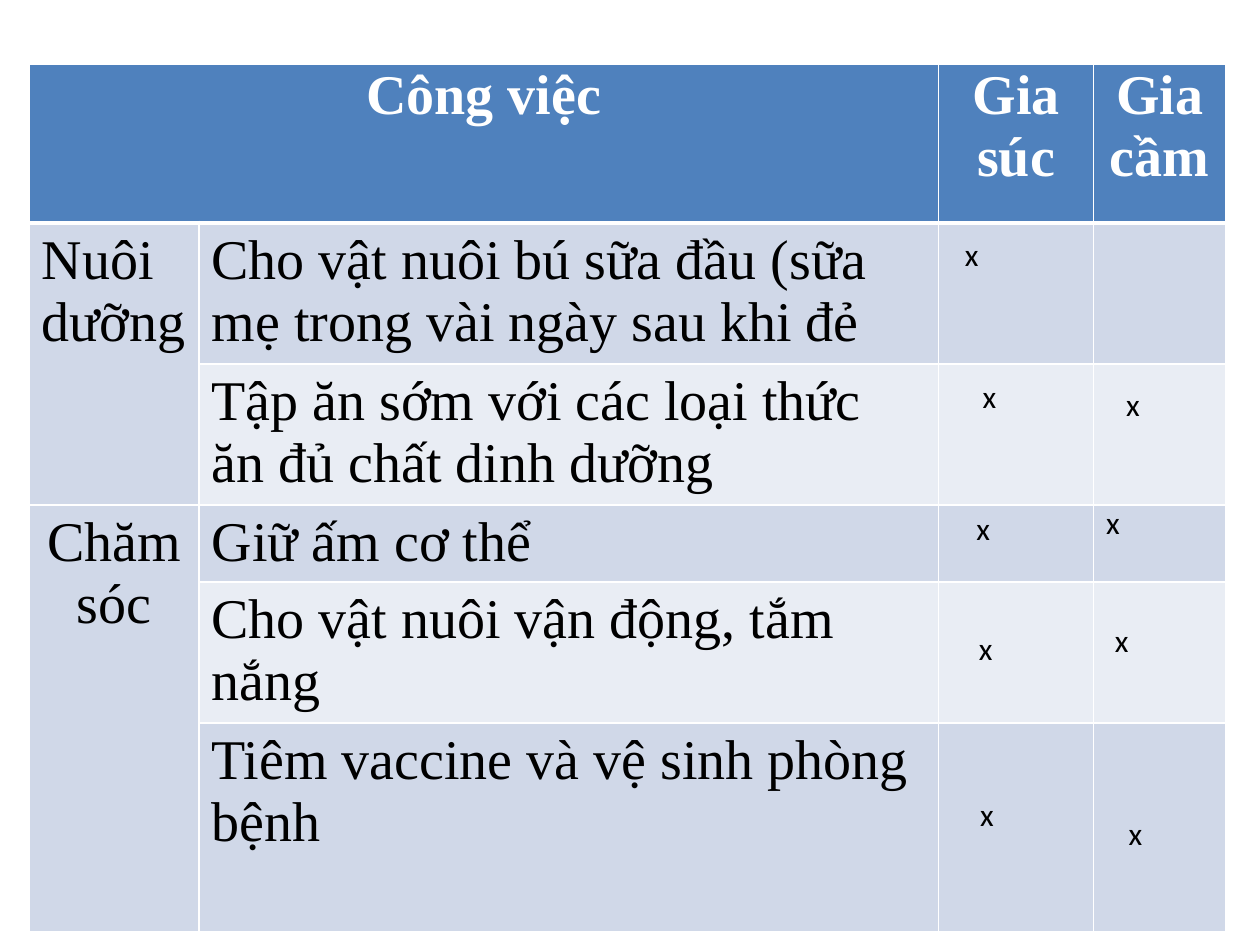
from dataclasses import dataclass
from itertools import accumulate
from lxml.etree import SubElement as Sub
from pptx import Presentation
from pptx.dml.color import RGBColor as Rgb
from pptx.enum.text import MSO_AUTO_SIZE as Fit, PP_ALIGN as Align
from pptx.oxml.ns import qn
from pptx.util import Inches as In, Pt


@dataclass(frozen=True)
class Theme:
    head: str = "4F81BD"
    dark: str = "D0D8E8"
    pale: str = "E9EDF4"
    white: str = "FFFFFF"
    ink: str = "000000"
    serif: str = "Times New Roman"
    sans: str = "Calibri"
    big: int = 32
    small: int = 18


T = Theme()
COLS = [1.35, 5.87, 1.23, 1.05]
ROWS = [1.26, 1.12, 1.12, 0.61, 1.12, 1.66]
BOX = (0.23, 0.51, sum(COLS), sum(ROWS))

HEAD = ["Công việc", "", "Gia súc", "Gia cầm"]
GROUPS = {1: "Nuôi dưỡng", 3: "Chăm sóc"}
TASKS = [
    "Cho vật nuôi bú sữa đầu (sữa mẹ trong vài ngày sau khi đẻ",
    "Tập ăn sớm với các loại thức ăn đủ chất dinh dưỡng",
    "Giữ ấm cơ thể",
    "Cho vật nuôi vận động, tắm nắng",
    "Tiêm vaccine và vệ sinh phòng bệnh",
]
# (row, column): shift from the corner of that cell
MARKS = {
    (1, 2): (0.11, 0.05), (2, 2): (0.25, 0.05), (3, 2): (0.2, -0.02),
    (4, 2): (0.22, 0.32), (5, 2): (0.23, 0.52),
    (2, 3): (0.16, 0.12), (3, 3): (0, -0.07),
    (4, 3): (0.07, 0.26), (5, 3): (0.18, 0.67),
}


def write(frame, text, size=T.big, font=T.serif, color=T.ink,
          bold=False, align=Align.LEFT):
    para = frame.paragraphs[0]
    para.alignment = align
    run = para.add_run()
    run.text = text
    run.font.size = Pt(size)
    run.font.name = font
    run.font.bold = bold
    run.font.color.rgb = Rgb.from_string(color)


def edge(cell, top=1, base=1):
    props = cell._tc.get_or_add_tcPr()
    for side, width in zip("LRTB", (1, 1, top, base)):
        line = Sub(props, qn(f"a:ln{side}"), w=str(Pt(width)))
        Sub(Sub(line, qn("a:solidFill")), qn("a:srgbClr"), val=T.white)


def grid(slide, box):
    table = slide.shapes.add_table(
        len(ROWS), len(COLS), *map(In, box)).table
    for col, wide in zip(table.columns, COLS):
        col.width = In(wide)
    for row, high in zip(table.rows, ROWS):
        row.height = In(high)

    # Fills and white rules
    for r, row in enumerate(table.rows):
        tone = T.head if r == 0 else (T.pale, T.dark)[r % 2]
        for c, cell in enumerate(row.cells):
            edge(cell, 3 if r == 1 else 1, 3 if r == 0 else 1)
            cell.fill.solid()
            shade = T.dark if r and c == 0 else tone
            cell.fill.fore_color.rgb = Rgb.from_string(shade)

    # Merged areas
    for first, last in [((0, 0), (0, 1)), ((1, 0), (2, 0)), ((3, 0), (5, 0))]:
        table.cell(*first).merge(table.cell(*last))

    # Header row
    for c, text in enumerate(HEAD):
        cell = table.cell(0, c)
        cell.margin_left = cell.margin_right = 0
        cell.margin_top = cell.margin_bottom = 0
        if text:
            write(cell.text_frame, text, color=T.white, bold=True,
                  align=Align.CENTER)

    # Groups and tasks
    for r, text in GROUPS.items():
        write(table.cell(r, 0).text_frame, text,
              align=Align.CENTER if r == 3 else Align.LEFT)
    for r, text in enumerate(TASKS, 1):
        write(table.cell(r, 1).text_frame, text)


def marks(slide, box):
    lefts = list(accumulate(COLS, initial=box[0]))
    tops = list(accumulate(ROWS, initial=box[1]))
    for (r, c), (dx, dy) in MARKS.items():
        frame = slide.shapes.add_textbox(
            In(lefts[c] + dx), In(tops[r] + dy), In(0.77), In(0.4)).text_frame
        frame.word_wrap = True
        frame.auto_size = Fit.SHAPE_TO_FIT_TEXT
        write(frame, "x", size=T.small, font=T.sans)


def main():
    deck = Presentation()
    deck.slide_width, deck.slide_height = In(10), In(7.5)
    slide = deck.slides.add_slide(deck.slide_layouts[6])
    grid(slide, BOX)
    marks(slide, BOX)
    deck.save("out.pptx")


if __name__ == "__main__":
    main()
